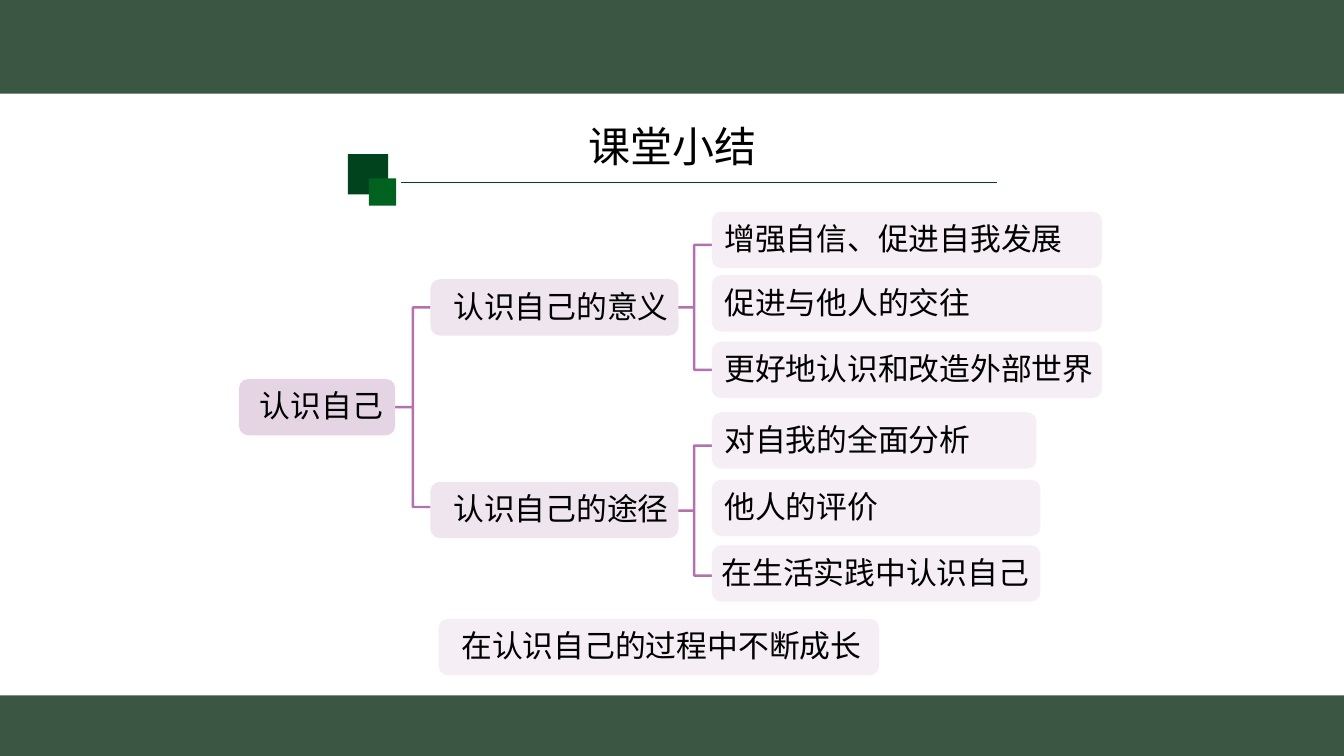
import lxml.etree
import pptx
import pptx.dml.color
import pptx.enum.shapes
import pptx.enum.text
import pptx.oxml.ns
import pptx.util

PX = 9144
FONT = "Noto Sans CJK SC"
SHAPES = pptx.enum.shapes.MSO_SHAPE
NODE_HEIGHT = 56


def px(length):
    """Turn px, 100 to the inch, into EMU."""
    return pptx.util.Emu(length * PX)


def colour(value):
    """Turn a hex string into a colour."""
    return pptx.dml.color.RGBColor.from_string(value)


def add_block(page, kind, box, fill):
    """Add a plain filled shape in the given box."""
    block = page.shapes.add_shape(kind, *map(px, box))
    block.shadow.inherit = False
    block.fill.solid()
    block.fill.fore_color.rgb = colour(fill)
    block.line.fill.background()
    return block


def write(shape, text, size, alignment, anchor, margins):
    """Write one black paragraph into a shape, with margins left, top, right, bottom."""
    frame = shape.text_frame
    frame.word_wrap = True
    frame.vertical_anchor = anchor
    frame.margin_left, frame.margin_top, frame.margin_right, frame.margin_bottom = map(px, margins)
    frame.text = text
    para = frame.paragraphs[0]
    para.alignment = alignment
    para.font.size = pptx.util.Pt(size)
    para.font.color.rgb = colour("000000")
    para.font.name = FONT
    defaults = para._p.pPr.find(pptx.oxml.ns.qn("a:defRPr"))
    lxml.etree.SubElement(defaults, pptx.oxml.ns.qn("a:ea"), typeface=FONT)
    return para


def add_bands(page, box):
    """Lay the green bands along the top and bottom of the box."""
    left, top, width, height = box
    for band_top, band_height in ((top, 93), (top + height - 60, 60)):
        add_block(page, SHAPES.RECTANGLE, (left, band_top, width, band_height), "3B5643")


def add_heading(page, box, text):
    """Place the title with its rule and two squares."""
    left, top, width, height = box
    rule = page.shapes.add_connector(
        pptx.enum.shapes.MSO_CONNECTOR.STRAIGHT,
        px(left + 180), px(top + 56), px(left + 771), px(top + 56))
    rule.line.color.rgb = colour("01431D")
    rule.line.width = pptx.util.Pt(1)
    lxml.etree.SubElement(rule._element.spPr, pptx.oxml.ns.qn("a:effectLst"))
    for x, y, side, fill in ((127, 28, 40, "01431D"), (148, 52, 27, "01621F")):
        add_block(page, SHAPES.RECTANGLE, (left + x, top + y, side, side), fill)
    title = page.shapes.title
    title.left, title.top, title.width, title.height = map(px, box)
    para = write(title, text, 30, pptx.enum.text.PP_ALIGN.CENTER,
                 pptx.enum.text.MSO_ANCHOR.TOP, (0, 0, 0, 0))
    para.line_spacing = 0.9


def add_brace(page, box):
    """Add a square bracket that joins a node to its branches."""
    brace = page.shapes.add_shape(SHAPES.LEFT_BRACE, *map(px, box))
    brace.shadow.inherit = False
    brace.adjustments[0] = 0
    brace.fill.background()
    brace.line.color.rgb = colour("B371AF")
    brace.line.width = pptx.util.Pt(1.75)


def add_node(page, left, top, width, text, fill, indent):
    """Add a rounded node with its text indented from the left."""
    node = add_block(page, SHAPES.ROUNDED_RECTANGLE, (left, top, width, NODE_HEIGHT), fill)
    write(node, text, 22, pptx.enum.text.PP_ALIGN.LEFT,
          pptx.enum.text.MSO_ANCHOR.MIDDLE, (indent, 0, 0, 3))


def add_mind_map(page, box):
    """Draw the root, its two branches, their leaves and the conclusion."""
    left, top, width, height = box
    root_fill, branch_fill, leaf_fill = "E4D4E4", "EFE5EF", "F5EEF5"
    branches = (
        ("认识自己的意义", 67, 33, 124, (
            ("增强自信、促进自我发展", 0, 387, 10),
            ("促进与他人的交往", 63, 387, 10),
            ("更好地认识和改造外部世界", 129, 387, 10))),
        ("认识自己的途径", 268, 232, 129, (
            ("对自我的全面分析", 199, 322, 10),
            ("他人的评价", 266, 326, 10),
            ("在生活实践中认识自己", 331, 326, 7))),
    )
    add_brace(page, (left + 155, top + 95, 35, 198))
    add_node(page, left, top + 166, 155, "认识自己", root_fill, 18)
    for branch, branch_top, brace_top, brace_height, leaves in branches:
        add_brace(page, (left + 434, top + brace_top, 35, brace_height))
        add_node(page, left + 190, top + branch_top, 246, branch, branch_fill, 20)
        for leaf, leaf_top, leaf_width, indent in leaves:
            add_node(page, left + 469, top + leaf_top, leaf_width, leaf, leaf_fill, indent)
    add_node(page, left + 198, top + height - NODE_HEIGHT, 437,
             "在认识自己的过程中不断成长", leaf_fill, 20)


def main():
    """Build and save the summary slide."""
    deck = pptx.Presentation()
    deck.slide_width, deck.slide_height = px(1333), px(750)
    page = deck.slides.add_slide(deck.slide_layouts[5])
    add_bands(page, (0, 0, 1333, 750))
    add_heading(page, (218, 125, 898, 63), "课堂小结")
    add_mind_map(page, (237, 210, 856, 460))
    deck.save("out.pptx")


if __name__ == "__main__":
    main()
